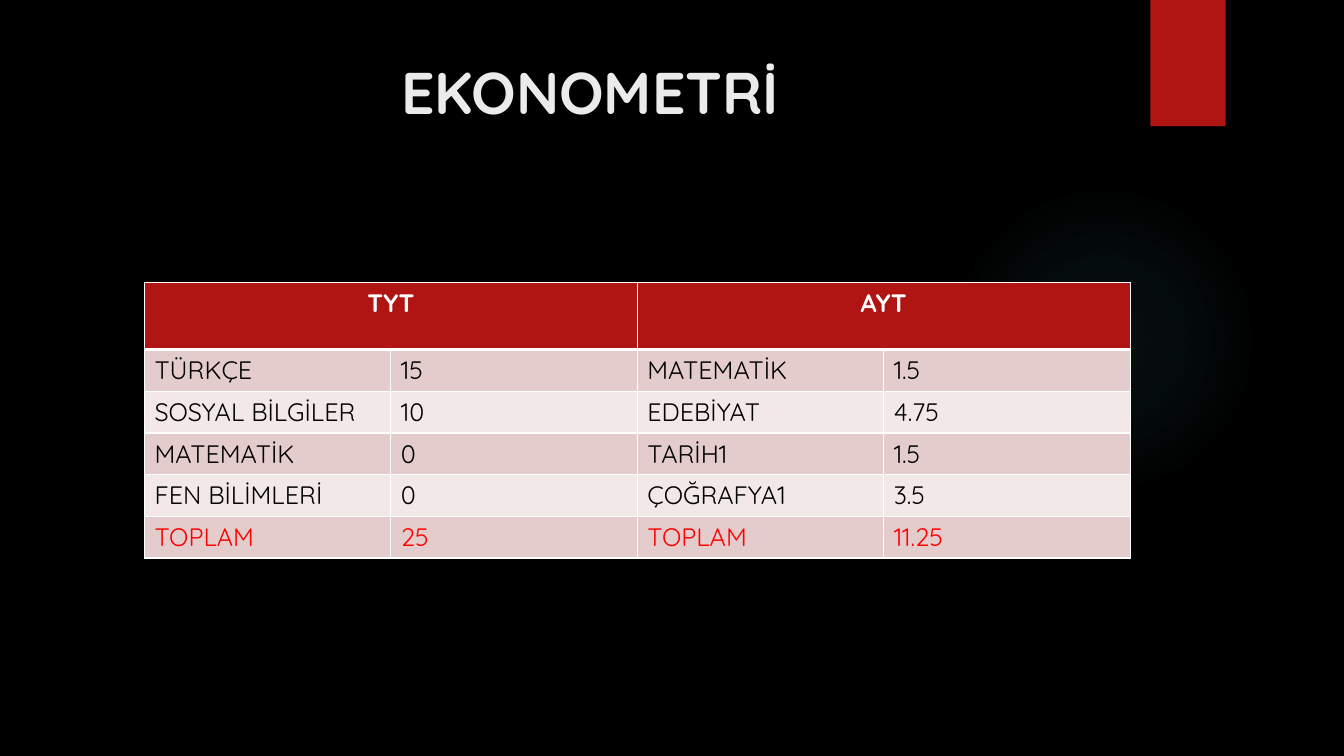
from pptx import Presentation
from pptx.dml.color import RGBColor as Rgb
from pptx.enum.shapes import MSO_SHAPE as Kind
from pptx.enum.text import PP_ALIGN as Align
from pptx.oxml import parse_xml as to_xml
from pptx.oxml.ns import nsdecls
from pptx.util import Cm, Pt

FONT = "Quicksand"
RED, WHITE = "B01513", "FFFFFF"
BANDS = ["E4CCCC", "F2E8E7"]
HEADS = ["TYT", "AYT"]
ROWS = [
    ["TÜRKÇE", "15", "MATEMATİK", "1.5"],
    ["SOSYAL BİLGİLER", "10", "EDEBİYAT", "4.75"],
    ["MATEMATİK", "0", "TARİH1", "1.5"],
    ["FEN BİLİMLERİ", "0", "ÇOĞRAFYA1", "3.5"],
    ["TOPLAM", "25", "TOPLAM", "11.25"],
]


def color(code):
    return Rgb.from_string(code)


def paint(item, code):
    item.fill.solid()
    item.fill.fore_color.rgb = color(code)


def write(frame, text, code, align=Align.LEFT, **form):
    para = frame.paragraphs[0]
    para.alignment = align
    run = para.add_run()
    run.text = text
    for name, value in {"name": FONT, **form}.items():
        setattr(run.font, name, value)
    run.font.color.rgb = color(code)


def add_shape(slide, kind, *box):
    shape = slide.shapes.add_shape(kind, *map(Cm, box))
    shape.shadow.inherit = False
    shape.line.fill.background()
    return shape


def add_glow(slide, *box):
    glow = add_shape(slide, Kind.OVAL, *box)
    stops = "".join(
        f'<a:gs pos="{pos * 1000}"><a:srgbClr val="50B9C1">'
        f'<a:alpha val="{alpha * 1000}"/></a:srgbClr></a:gs>'
        for pos, alpha in [(0, 7), (36, 6), (69, 0), (100, 0)])
    grad = to_xml(
        f'<a:gradFill {nsdecls("a")}><a:gsLst>{stops}</a:gsLst>'
        '<a:path path="circle"><a:fillToRect l="50000" t="50000" '
        'r="50000" b="50000"/></a:path></a:gradFill>')
    glow.element.spPr.find("{*}prstGeom").addnext(grad)


def add_title(slide, text, *box):
    frame = slide.shapes.add_textbox(*map(Cm, box)).text_frame
    frame.word_wrap = True
    write(frame, text, "EBEBEB", Align.CENTER, size=Pt(42), bold=True)


def edge(cell, top=1, base=1):
    props = cell._tc.get_or_add_tcPr()
    for side, width in {"L": 1, "R": 1, "T": top, "B": base}.items():
        props.append(to_xml(
            f'<a:ln{side} {nsdecls("a")} w="{Pt(width)}"><a:solidFill>'
            f'<a:srgbClr val="{WHITE}"/></a:solidFill></a:ln{side}>'))


def add_table(slide, left, top, wide, head, high):
    count = len(ROWS)
    table = slide.shapes.add_table(
        count + 1, 4, Cm(left), Cm(top), Cm(4 * wide),
        Cm(head + count * high)).table
    for col in table.columns:
        col.width = Cm(wide)
    for num, row in enumerate(table.rows):
        row.height = Cm(high if num else head)

    # Header cells, each over two columns
    for col in range(4):
        cell = table.cell(0, col)
        edge(cell, base=3)
        paint(cell, RED)
    for num, text in enumerate(HEADS):
        cell = table.cell(0, 2 * num)
        cell.merge(table.cell(0, 2 * num + 1))
        write(cell.text_frame, text, WHITE, Align.CENTER,
              size=Pt(18), bold=True)

    # Banded body, with the totals in red
    for num, row in enumerate(ROWS):
        ink = "FF0000" if num == count - 1 else "000000"
        for col, text in enumerate(row):
            cell = table.cell(num + 1, col)
            edge(cell, top=1 if num else 3)
            paint(cell, BANDS[num % 2])
            write(cell.text_frame, text, ink, size=Pt(18), bold=False)


def main():
    deck = Presentation()
    deck.slide_width, deck.slide_height = Cm(33.87), Cm(19.05)
    slide = deck.slides.add_slide(deck.slide_layouts[6])

    # Backdrop
    paint(slide.background, "000000")
    add_glow(slide, 23.9, 4.65, 7.82, 7.82)
    paint(add_shape(slide, Kind.RECTANGLE, 28.99, 0, 1.9, 3.18), RED)

    # Content
    add_title(slide, "EKONOMETRİ", 1.8, 1.27, 26.14, 3.89)
    add_table(slide, 3.64, 7.12, 6.21, 1.69, 1.05)
    deck.save("out.pptx")


if __name__ == "__main__":
    main()
